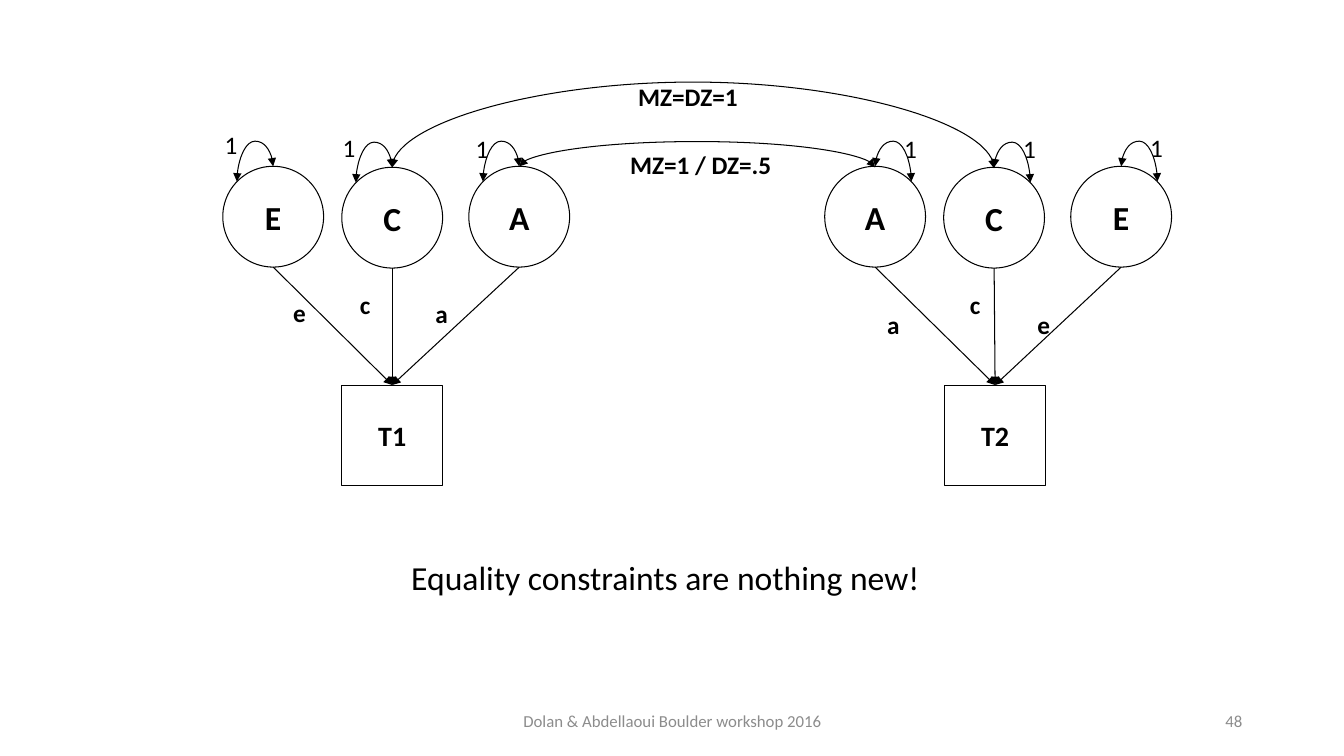
from pptx import Presentation
from pptx.dml.color import RGBColor
from pptx.enum.shapes import MSO_CONNECTOR, MSO_SHAPE
from pptx.enum.text import MSO_ANCHOR, MSO_AUTO_SIZE, PP_ALIGN
from pptx.oxml.ns import qn
from pptx.util import Inches, Pt
from lxml import etree

OVAL, RECT = MSO_SHAPE.OVAL, MSO_SHAPE.RECTANGLE
STRAIGHT, CURVE = MSO_CONNECTOR.STRAIGHT, MSO_CONNECTOR.CURVE
LEFT, CENTER, RIGHT = PP_ALIGN.LEFT, PP_ALIGN.CENTER, PP_ALIGN.RIGHT
TOP, MIDDLE = MSO_ANCHOR.TOP, MSO_ANCHOR.MIDDLE
GROW, FIXED = MSO_AUTO_SIZE.SHAPE_TO_FIT_TEXT, MSO_AUTO_SIZE.NONE
BLACK, WHITE, GRAY = "000000", "FFFFFF", "8C8C8C"
SIZE, RISE, DROP, LOOP = 1, 0.25, 0.15, 0.36
BOX_TOP = 3.82

TWINS = [
    ("T1", 3.89, -1,
     [("E", 2.71, 1.65, 2.13, 1.23), ("C", 3.89, 1.66, 3.3, 1.26),
      ("A", 5.15, 1.65, 4.62, 1.27)],
     [("e", 2.81, 2.9, 0.33), ("c", 3.47, 2.82, 0.31), ("a", 4.22, 2.91, 0.32)]),
    ("T2", 9.87, 1,
     [("A", 8.68, 1.65, 8.87, 1.27), ("C", 9.86, 1.66, 10.05, 1.27),
      ("E", 11.12, 1.65, 11.31, 1.26)],
     [("a", 8.7, 3.02, 0.32), ("c", 9.52, 2.82, 0.31), ("e", 10.19, 3.02, 0.33)]),
]


def paint(color, value):
    """Set a colour from a hex string."""
    color.rgb = RGBColor.from_string(value)


def write(shape, text, size, bold=False, color=BLACK, align=LEFT,
          anchor=TOP, wrap=False, fit=FIXED):
    """Put one styled paragraph into a shape."""
    frame = shape.text_frame
    frame.text = text
    frame.word_wrap = wrap
    frame.auto_size = fit
    frame.vertical_anchor = anchor
    para = frame.paragraphs[0]
    para.alignment = align
    para.font.name = "Calibri"
    para.font.size = Pt(size)
    para.font.bold = bold
    paint(para.font.color, color)


def label(slide, text, x, y, width, height=0.4, size=18, fit=GROW, **style):
    """Add a text box."""
    box = slide.shapes.add_textbox(Inches(x), Inches(y), Inches(width), Inches(height))
    write(box, text, size, fit=fit, **style)


def node(slide, kind, text, mid, top, size):
    """Add a white outlined shape centred on mid."""
    shape = slide.shapes.add_shape(
        kind, Inches(mid - SIZE / 2), Inches(top), Inches(SIZE), Inches(SIZE))
    shape.shadow.inherit = False
    shape.fill.solid()
    paint(shape.fill.fore_color, WHITE)
    paint(shape.line.color, BLACK)
    shape.line.width = Pt(0.75)
    write(shape, text, size, bold=True, align=CENTER, anchor=MIDDLE)


def arrow(slide, kind, x1, y1, x2, y2, ends=("tailEnd",)):
    """Add a thin black connector with arrowheads."""
    wire = slide.shapes.add_connector(kind, Inches(x1), Inches(y1), Inches(x2), Inches(y2))
    paint(wire.line.color, BLACK)
    wire.line.width = Pt(0.75)
    for end in ends:
        etree.SubElement(wire.get_or_add_ln(), qn(f"a:{end}"), type="triangle")
    etree.SubElement(wire.element.spPr, qn("a:effectLst"))
    return wire


def arc(slide, x1, x2, top, drop, rise):
    """Add a two-headed arc that rises above its ends."""
    span = abs(x2 - x1)
    left = (x1 + x2 - drop) / 2
    high = top + (drop - span) / 2
    low, right = high + span, left + drop
    start, stop, turn = (left, right, 90) if x2 > x1 else (right, left, 270)
    wire = arrow(slide, CURVE, start, low, stop, high, ("headEnd", "tailEnd"))
    props = wire.element.spPr
    props.find(qn("a:xfrm")).set("rot", str(turn * 60000))
    shape = props.find(qn("a:prstGeom"))
    guides = shape.find(qn("a:avLst"))
    if guides is None:
        guides = etree.SubElement(shape, qn("a:avLst"))
    bend = round(-rise / drop * 100000)
    etree.SubElement(guides, qn("a:gd"), name="adj1", fmla=f"val {bend}")


def twin(slide, name, mid, side, factors, paths):
    """Draw one twin with its factors, loops and paths."""
    for text, x, y, one_x, one_y in factors:
        node(slide, OVAL, text, x, y, 24)
        arc(slide, x, x + side * LOOP, y, DROP, RISE)
        label(slide, "1", one_x, one_y, 0.33)
    node(slide, RECT, name, mid, BOX_TOP, 20)
    for text, x, y, *rest in factors:
        arrow(slide, STRAIGHT, x, y + SIZE, mid, BOX_TOP)
    for text, x, y, width in paths:
        label(slide, text, x, y, width, bold=True)


def main():
    """Build the slide and save it."""
    deck = Presentation()
    deck.slide_width, deck.slide_height = Inches(13.33), Inches(7.5)
    slide = deck.slides.add_slide(deck.slide_layouts[6])
    for item in TWINS:
        twin(slide, *item)
    arc(slide, 5.15, 8.68, 1.65, 0.01, RISE)
    arc(slide, 3.89, 9.86, 1.66, 0.01, 0.86)
    label(slide, "MZ=DZ=1", 6.23, 0.76, 1.19, bold=True)
    label(slide, "MZ=1 / DZ=.5", 6.15, 1.43, 1.61, bold=True)
    label(slide, "Equality constraints are nothing new!", 3.98, 5.48, 6.21, 0.5,
          size=24, wrap=True)
    foot = dict(size=12, color=GRAY, anchor=MIDDLE, wrap=True, fit=FIXED)
    label(slide, "48", 9.42, 6.95, 3, align=RIGHT, **foot)
    label(slide, "Dolan & Abdellaoui Boulder workshop 2016", 4.42, 6.95, 4.5,
          align=CENTER, **foot)
    deck.save("out.pptx")


if __name__ == "__main__":
    main()
